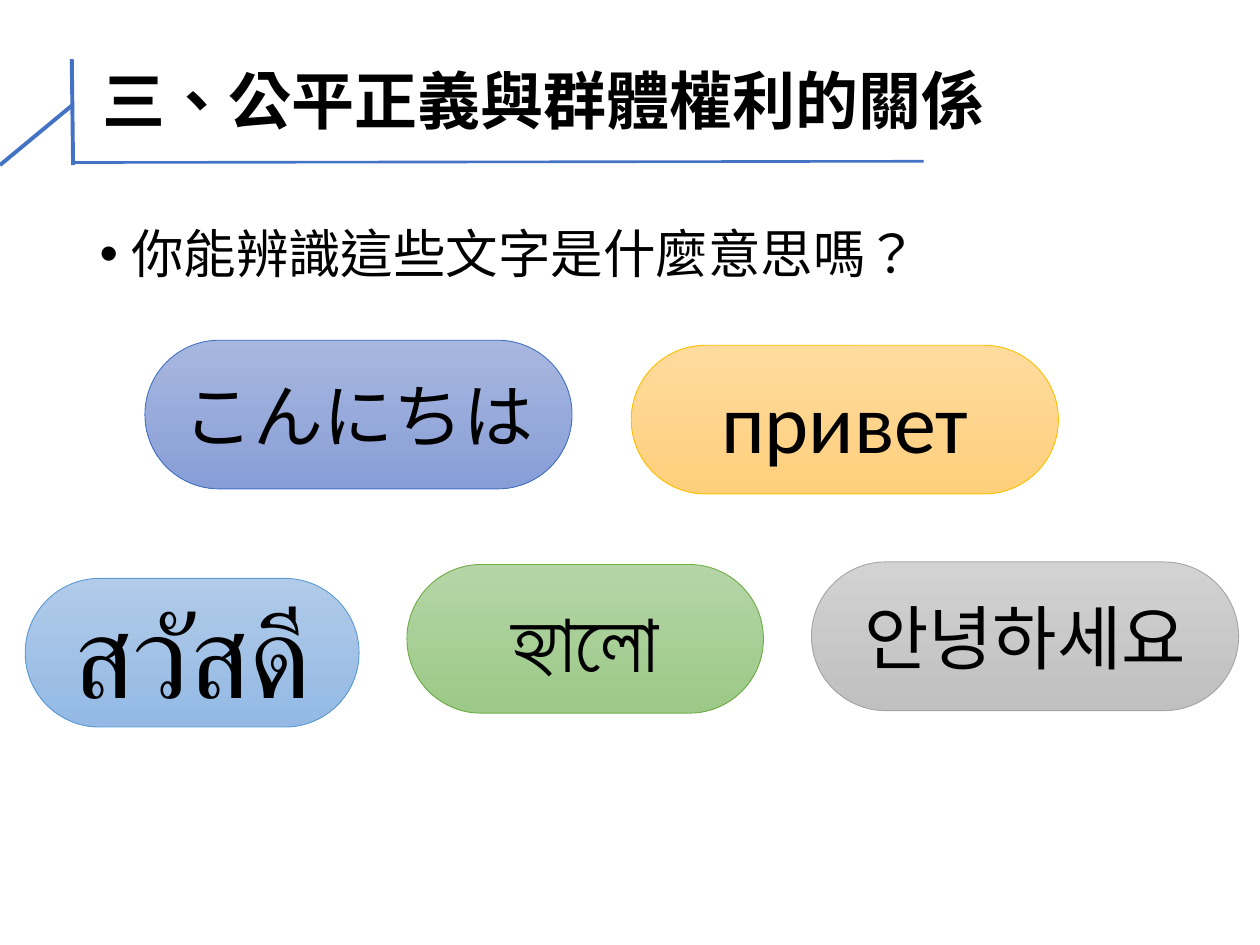
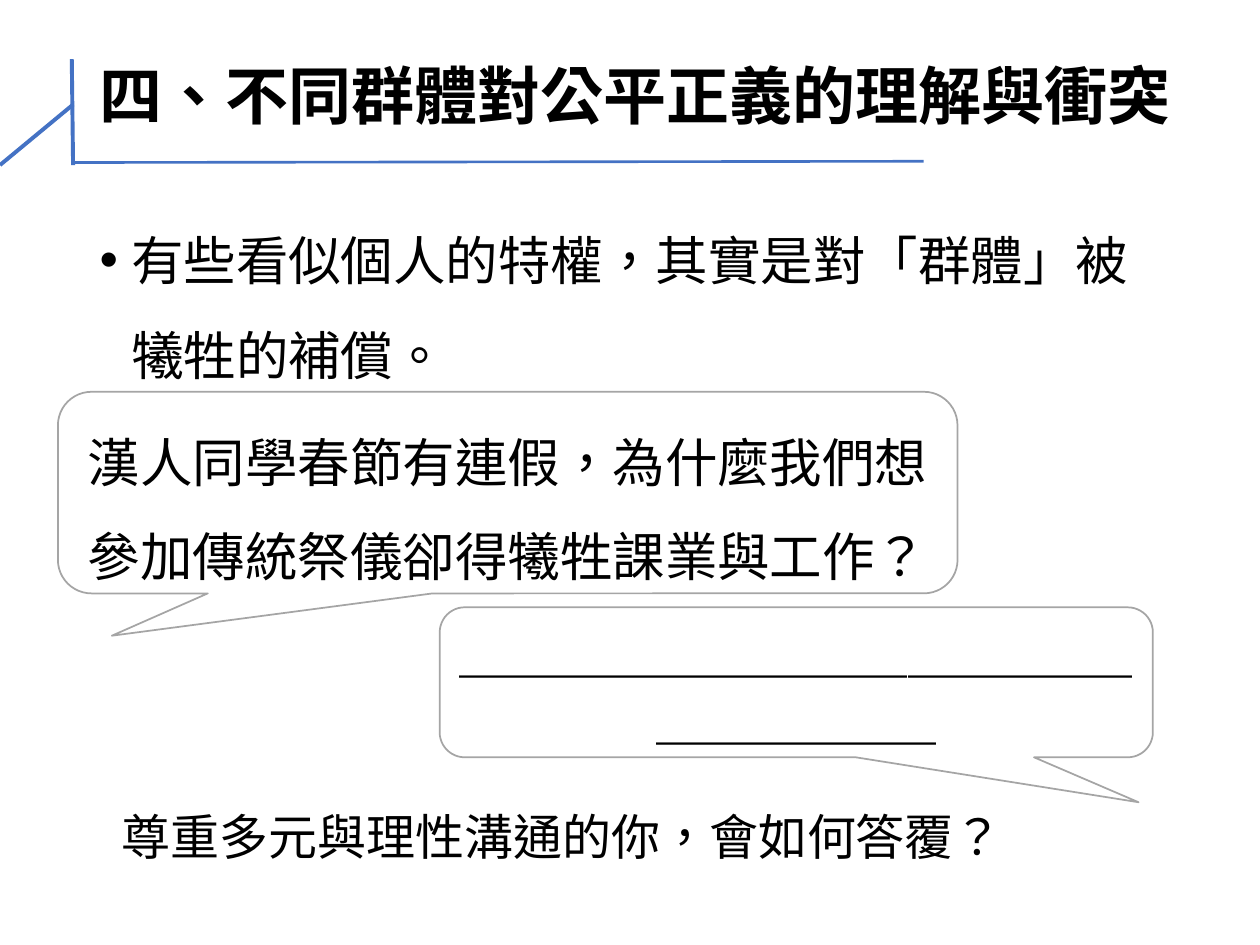
from dataclasses import dataclass

from lxml.etree import SubElement
from pptx import Presentation
from pptx.dml.color import RGBColor
from pptx.enum.lang import MSO_LANGUAGE_ID as Language
from pptx.enum.shapes import MSO_CONNECTOR as Connector, MSO_SHAPE as Shape
from pptx.enum.text import MSO_ANCHOR as Anchor, MSO_AUTO_SIZE as AutoSize, PP_ALIGN as Align
from pptx.oxml.ns import qn
from pptx.util import Inches, Pt


@dataclass(frozen=True)
class Theme:
    text: str = "000000"
    paper: str = "FFFFFF"
    accent: str = "4472C4"
    outline: str = "A5A5A5"
    cjk_font: str = "Noto Sans CJK SC"
    latin_font: str = "Calibri"
    title_size: int = 36
    body_size: int = 30
    blank_size: int = 32
    question_size: int = 28


THEME = Theme()
TITLE_AND_CONTENT = 1

# Bracket around the title: start, end, width in points
BRACKET = [
    ((0, 1.31), (0.58, 0.83), 2.25),
    ((0.57, 0.47), (0.58, 1.31), 2.25),
    ((0.58, 1.29), (7.33, 1.28), 1.5),
]

GREETINGS_SLIDE = {
    "title": ("三、公平正義與群體權利的關係", (0.71, 0.4, 8.6, 0.86)),
    "body": ("你能辨識這些文字是什麼意思嗎？", (0.69, 1.76, 8.62, 4.99), 0.9),
}
PILL_HEIGHT = 1.18
# Greeting, size, left, top, width, gradient top, gradient bottom, outline
GREETINGS = [
    ("こんにちは", 40, 1.15, 2.7, 3.39, "A8B7DF", "889ED7", "4472C4"),
    ("привет", 48, 5.01, 2.74, 3.39, "FFDB9E", "FFD07C", "FFC000"),
    ("สวัสดี", 66, 0.2, 4.59, 2.65, "B1CBE9", "93B9E4", "5B9BD5"),
    ("হ্যালো", 48, 3.23, 4.48, 2.83, "B5D5A7", "9CC987", "70AD47"),
    ("안녕하세요", 40, 6.44, 4.46, 3.39, "D2D2D2", "C0C0C0", "A5A5A5"),
]

CONFLICT_SLIDE = {
    "title": ("四、不同群體對公平正義的理解與衝突", (0.69, 0.35, 8.81, 0.88)),
    "body": ("有些看似個人的特權，其實是對「群體」被犧牲的補償。", (0.69, 1.51, 8.62, 5.25), 1.5),
}
# Text, box, tail position, text format
CALLOUTS = [
    ("漢人同學春節有連假，為什麼我們想參加傳統祭儀卻得犧牲課業與工作？",
     (0.46, 3.11, 7.14, 1.6), (-0.44, 0.71),
     {"size": THEME.body_size, "font": THEME.cjk_font, "line_spacing": 1.5}),
    ("＿" * 17, (3.49, 4.82, 5.66, 1.19), (0.48, 0.8),
     {"size": THEME.blank_size, "font": THEME.latin_font}),
]
QUESTION = ("尊重多元與理性溝通的你，會如何答覆？", (0.87, 6.35, 7.27, 0.57))


def color(value):
    return RGBColor.from_string(value)


def write(shape, text, *, size, font=THEME.cjk_font, bold=False, align=Align.LEFT,
          anchor=Anchor.MIDDLE, line_spacing=1.0, wrap=True, auto_size=AutoSize.NONE,
          hanging=None):
    frame = shape.text_frame
    frame.word_wrap, frame.auto_size, frame.vertical_anchor = wrap, auto_size, anchor
    paragraph = frame.paragraphs[0]
    paragraph.alignment, paragraph.line_spacing = align, line_spacing
    paragraph.space_before = Pt(0)
    if hanging:
        properties = paragraph._p.get_or_add_pPr()
        properties.set("marL", str(Inches(hanging)))
        properties.set("indent", str(-Inches(hanging)))
        SubElement(properties, qn("a:buChar"), char="•")
    run = paragraph.add_run()
    run.text = text
    run.font.size, run.font.bold, run.font.name = Pt(size), bold, font
    run.font.color.rgb = color(THEME.text)
    if font == THEME.cjk_font:
        run.font.language_id = Language.TRADITIONAL_CHINESE
        latin = run._r.get_or_add_rPr().find(qn("a:latin"))
        east_asian = SubElement(run._r.rPr, qn("a:ea"), typeface=font)
        latin.addnext(east_asian)


def place(shape, box):
    shape.left, shape.top, shape.width, shape.height = map(Inches, box)


def add_bracket(slide):
    group = slide.shapes.add_group_shape()
    for start, end, width in BRACKET:
        line = group.shapes.add_connector(Connector.STRAIGHT, *map(Inches, start + end))
        line.line.color.rgb = color(THEME.accent)
        line.line.width = Pt(width)
        SubElement(line._element.spPr, qn("a:effectLst"))


def add_slide(presentation, content):
    """Add a slide with its title, bulleted body and title bracket."""
    slide = presentation.slides.add_slide(presentation.slide_layouts[TITLE_AND_CONTENT])
    title, title_box = content["title"]
    place(slide.shapes.title, title_box)
    write(slide.shapes.title, title, size=THEME.title_size, bold=True, line_spacing=0.9)
    body, body_box, line_spacing = content["body"]
    place(slide.placeholders[1], body_box)
    write(slide.placeholders[1], body, size=THEME.body_size, anchor=Anchor.TOP,
          line_spacing=line_spacing, hanging=0.25)
    add_bracket(slide)
    return slide


def add_outlined(slide, preset, box, outline, width):
    shape = slide.shapes.add_shape(preset, *map(Inches, box))
    shape.shadow.inherit = False
    shape.line.color.rgb = color(outline)
    shape.line.width = Pt(width)
    return shape


def add_greeting(slide, text, size, left, top, width, light, dark, outline):
    pill = add_outlined(slide, Shape.ROUNDED_RECTANGLE, (left, top, width, PILL_HEIGHT),
                        outline, 0.5)
    pill.adjustments[0] = 0.5
    pill.fill.gradient()
    pill.fill.gradient_angle = 270
    for stop, shade in zip(pill.fill.gradient_stops, (light, dark)):
        stop.color.rgb = color(shade)
    write(pill, text, size=size, font=THEME.latin_font, align=Align.CENTER)


def add_callout(slide, text, box, tail, text_format):
    callout = add_outlined(slide, Shape.ROUNDED_RECTANGULAR_CALLOUT, box, THEME.outline, 1)
    callout.adjustments[0], callout.adjustments[1] = tail
    callout.fill.solid()
    callout.fill.fore_color.rgb = color(THEME.paper)
    write(callout, text, align=Align.CENTER, **text_format)


def main():
    presentation = Presentation()
    presentation.slide_width, presentation.slide_height = Inches(10), Inches(7.5)

    slide = add_slide(presentation, GREETINGS_SLIDE)
    for greeting in GREETINGS:
        add_greeting(slide, *greeting)

    slide = add_slide(presentation, CONFLICT_SLIDE)
    for callout in CALLOUTS:
        add_callout(slide, *callout)
    question, box = QUESTION
    write(slide.shapes.add_textbox(*map(Inches, box)), question, size=THEME.question_size,
          anchor=Anchor.TOP, wrap=False, auto_size=AutoSize.SHAPE_TO_FIT_TEXT)

    presentation.save("out.pptx")


if __name__ == "__main__":
    main()
